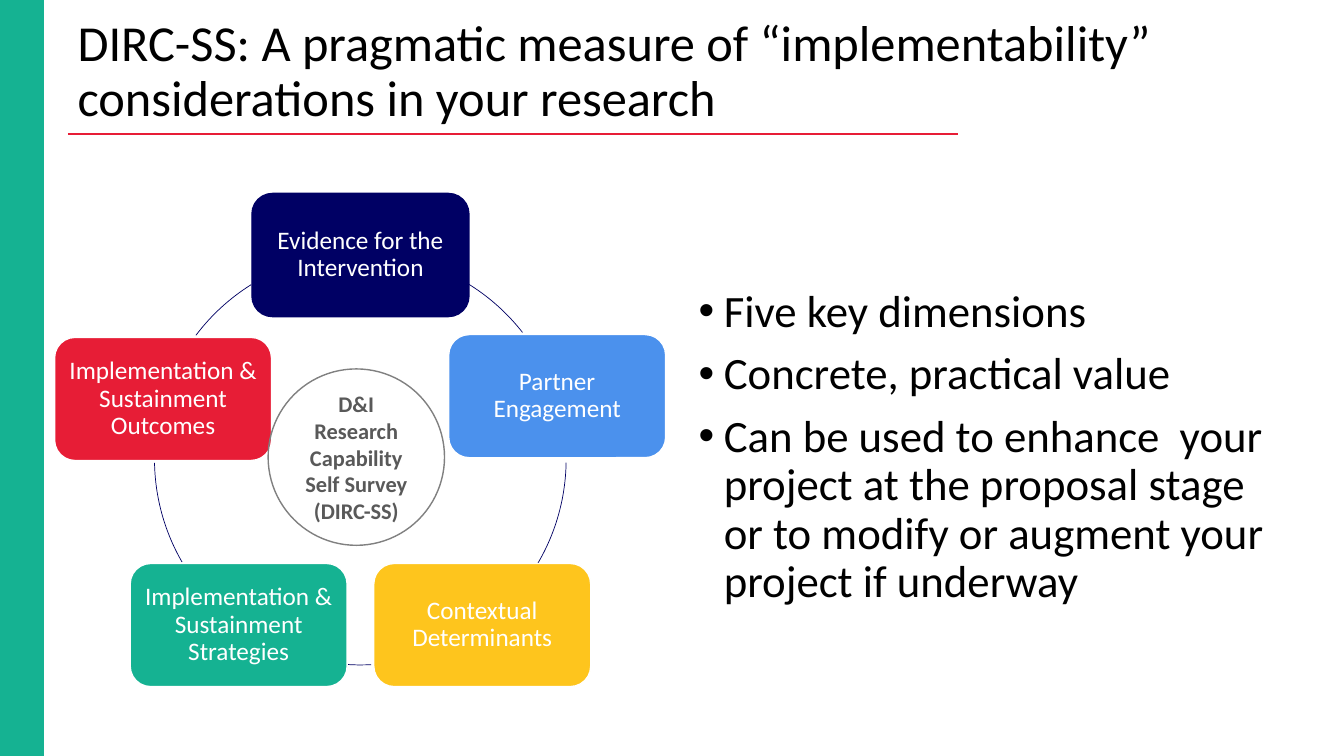
from lxml import etree
from pptx import Presentation
from pptx.dml.color import RGBColor
from pptx.enum.shapes import MSO_CONNECTOR, MSO_SHAPE
from pptx.enum.text import MSO_ANCHOR, MSO_AUTO_SIZE, PP_ALIGN
from pptx.oxml.ns import qn
from pptx.util import Pt

RECTANGLE, ROUNDED = MSO_SHAPE.RECTANGLE, MSO_SHAPE.ROUNDED_RECTANGLE
OVAL, ARC = MSO_SHAPE.OVAL, MSO_SHAPE.ARC
LEFT, CENTER = PP_ALIGN.LEFT, PP_ALIGN.CENTER
TOP, MIDDLE = MSO_ANCHOR.TOP, MSO_ANCHOR.MIDDLE

FONT = "Calibri"
BLACK, WHITE, NAVY, RED, GREEN = "000000", "FFFFFF", "000064", "E71D36", "15B292"
GRAY, DARK_GRAY = "808080", "595959"

TITLE = "DIRC-SS: A pragmatic measure of “implementability” considerations in your research"
BULLETS = [
    "Five key dimensions",
    "Concrete, practical value",
    "Can be used to enhance  your project at the proposal stage "
    "or to modify or augment your project if underway",
]
HUB = "D&I Research Capability Self Survey (DIRC-SS)"
# text, left, top, fill, line
DIMENSIONS = [
    ("Evidence for the Intervention", 180, 138.2, NAVY, NAVY),
    ("Partner Engagement", 320.5, 239, "4B91ED", WHITE),
    ("Contextual Determinants", 267, 402.5, "FEC51D", WHITE),
    ("Implementation & Sustainment Strategies", 93, 402.5, GREEN, WHITE),
    ("Implementation & Sustainment Outcomes", 39, 241, RED, WHITE),
]
NODE_SIZE = (155, 88)
# start and end of each visible piece of the ring, clockwise degrees from the right
RING_GAPS = [(301, 322), (1, 30.5), (87, 94), (150, 179), (217, 238)]
RING_X, RING_Y, RING_RADIUS = 257.4, 328, 147


def rgb(value):
    return RGBColor.from_string(value)


def add_shape(page, kind, left, top, width, height, fill, line, line_width=1):
    shape = page.shapes.add_shape(kind, Pt(left), Pt(top), Pt(width), Pt(height))
    shape.shadow.inherit = False
    if fill:
        shape.fill.solid()
        shape.fill.fore_color.rgb = rgb(fill)
    else:
        shape.fill.background()
    shape.line.color.rgb = rgb(line)
    shape.line.width = Pt(line_width)
    return shape


def style(para, size, color, align, bold=False):
    para.alignment = align
    para.font.name = FONT
    para.font.size = Pt(size)
    para.font.bold = bold
    para.font.color.rgb = rgb(color)


def place(holder, left, top, width, height, anchor):
    holder.left, holder.top = Pt(left), Pt(top)
    holder.width, holder.height = Pt(width), Pt(height)
    frame = holder.text_frame
    frame.word_wrap = True
    frame.auto_size = MSO_AUTO_SIZE.NONE
    frame.vertical_anchor = anchor
    return frame


def add_bullet(para, indent):
    props = para._p.get_or_add_pPr()
    props.set("marL", str(Pt(indent)))
    props.set("indent", str(Pt(-indent)))
    etree.SubElement(props, qn("a:buFont")).set("typeface", "Arial")
    etree.SubElement(props, qn("a:buChar")).set("char", "•")


def add_frame(page):
    add_shape(page, RECTANGLE, 0, 0, 31, 540, GREEN, GREEN)
    rule = page.shapes.add_connector(MSO_CONNECTOR.STRAIGHT, Pt(48.5), Pt(95.7), Pt(684.5), Pt(95.7))
    rule.line.color.rgb = rgb(RED)
    rule.line.width = Pt(1.5)
    etree.SubElement(rule._element.spPr, qn("a:effectLst"))


def add_text(page):
    frame = place(page.shapes.title, 48.2, 20.9, 872, 62, MIDDLE)
    frame.text = TITLE
    style(frame.paragraphs[0], 36, BLACK, LEFT)
    frame.paragraphs[0].line_spacing = 0.9

    frame = place(page.placeholders[1], 491.8, 152.6, 435.6, 299.5, TOP)
    frame.margin_top = Pt(53.6)
    frame.text = "\n".join(BULLETS)
    for number, para in enumerate(frame.paragraphs):
        para.line_spacing = 0.9
        para.space_before = Pt(10 if number else 0)
        add_bullet(para, 18)
        style(para, 32, BLACK, LEFT)


def add_cycle(page):
    for start, end in RING_GAPS:
        arc = add_shape(page, ARC, RING_X - RING_RADIUS, RING_Y - RING_RADIUS,
                        2 * RING_RADIUS, 2 * RING_RADIUS, None, NAVY, 0.5)
        # angles are stored in 1/60000 degree, adjustments in 1/100000
        arc.adjustments[0], arc.adjustments[1] = start * 0.6, end * 0.6

    for text, left, top, fill, line in DIMENSIONS:
        node = add_shape(page, ROUNDED, left, top, *NODE_SIZE, fill, line)
        frame = node.text_frame
        frame.margin_left = frame.margin_right = Pt(5)
        frame.word_wrap = True
        frame.vertical_anchor = MIDDLE
        frame.text = text
        frame.paragraphs[0].line_spacing = 0.9
        style(frame.paragraphs[0], 18, WHITE, CENTER)

    hub = add_shape(page, OVAL, 191.5, 263.5, 126, 126, None, GRAY)
    hub.text_frame.word_wrap = True
    hub.text_frame.vertical_anchor = MIDDLE
    hub.text_frame.text = HUB
    style(hub.text_frame.paragraphs[0], 16, DARK_GRAY, CENTER, bold=True)


def main():
    deck = Presentation()
    deck.slide_width, deck.slide_height = Pt(960), Pt(540)
    page = deck.slides.add_slide(deck.slide_layouts[1])
    add_frame(page)
    add_text(page)
    add_cycle(page)
    deck.save("out.pptx")


if __name__ == "__main__":
    main()
